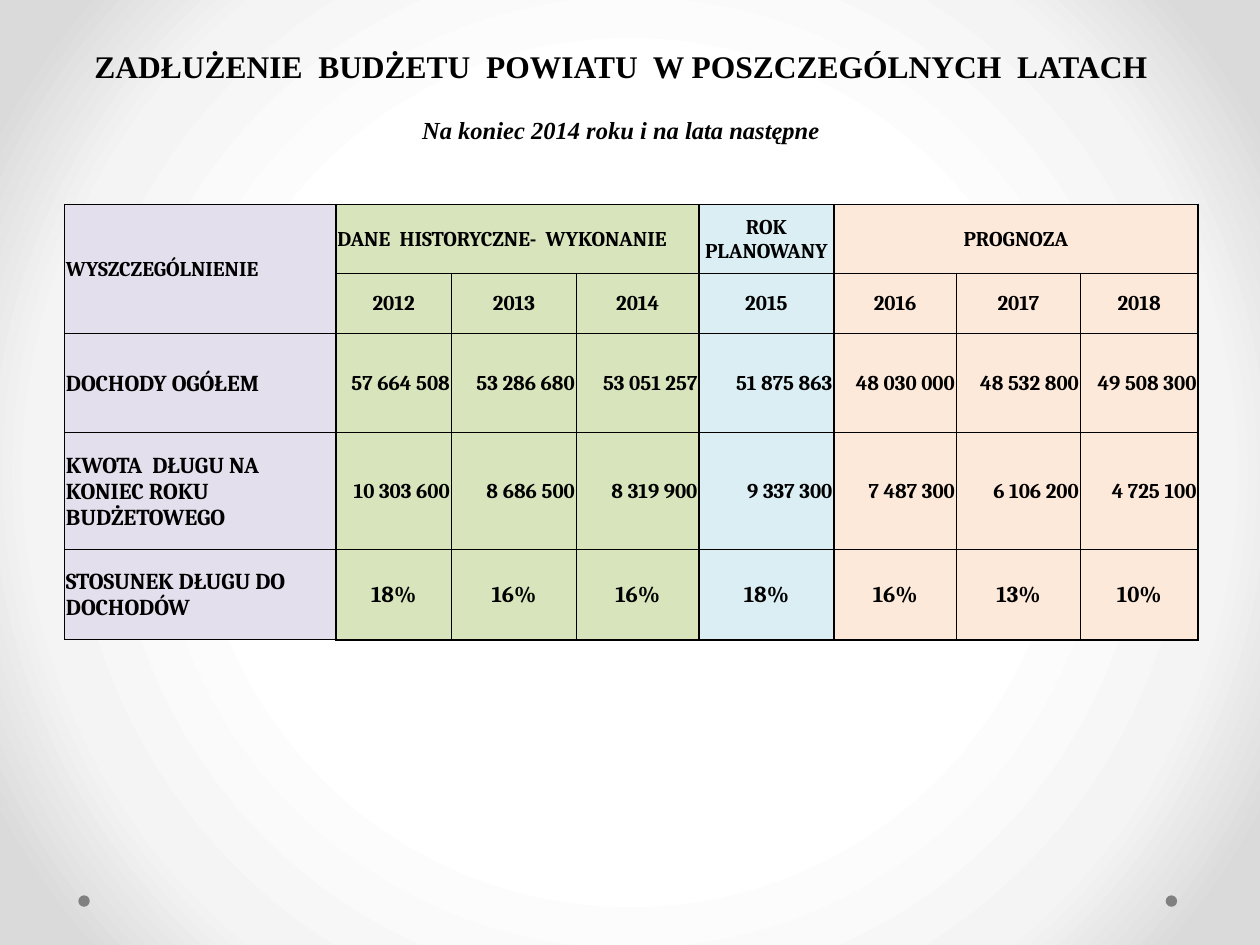
from dataclasses import dataclass

from pptx import Presentation
from pptx.dml.color import RGBColor
from pptx.enum.shapes import MSO_SHAPE
from pptx.enum.text import MSO_ANCHOR as Anchor, PP_ALIGN as Align
from pptx.oxml import parse_xml
from pptx.oxml.ns import nsdecls
from pptx.util import Cm, Pt


@dataclass(frozen=True)
class Theme:
    """Colours, fonts and sizes of the slide."""
    text: str = "000000"
    label: str = "E4DFEC"
    history: str = "D8E4BC"
    plan: str = "DAEEF3"
    forecast: str = "FDE9D9"
    dot: str = "808080"
    backdrop: tuple = ((50, "FFFFFF"), (76, "F4F4F4"), (92, "DADADA"))
    heading_font: str = "Times New Roman"
    table_font: str = "Cambria"
    title_size: int = 18
    subtitle_size: int = 14
    large_size: int = 13
    normal_size: int = 12
    thin: float = 0.5
    thick: float = 1


THEME = Theme()
COLUMN_WIDTHS = (5.47, 2.33, 2.52, 2.47, 2.72, 2.47, 2.5, 2.37)
ROW_HEIGHTS = (1.39, 1.21, 2, 2.36, 1.82)
COLUMN_FILLS = (THEME.label, *[THEME.history] * 3, THEME.plan, *[THEME.forecast] * 3)
GROUP_EDGES = {1, 4, 5, 8}
MERGES = (((0, 0), (1, 0)), ((0, 1), (0, 3)), ((0, 5), (0, 7)))
ROWS = (
    ("WYSZCZEGÓLNIENIE", "DANE  HISTORYCZNE-  WYKONANIE", "", "", "ROK PLANOWANY", "PROGNOZA", "", ""),
    ("", "2012", "2013", "2014", "2015", "2016", "2017", "2018"),
    ("DOCHODY OGÓŁEM", "57 664 508", "53 286 680", "53 051 257", "51 875 863",
     "48 030 000", "48 532 800", "49 508 300"),
    ("KWOTA  DŁUGU NA KONIEC ROKU BUDŻETOWEGO", "10 303 600", "8 686 500", "8 319 900",
     "9 337 300", "7 487 300", "6 106 200", "4 725 100"),
    ("STOSUNEK DŁUGU DO DOCHODÓW", "18%", "16%", "16%", "18%", "16%", "13%", "10%"),
)


def solid_fill(color):
    """Return the XML of a solid fill."""
    return f'<a:solidFill><a:srgbClr val="{color}"/></a:solidFill>'


def set_background(slide):
    """Give the slide a circular gradient that spreads from its centre."""
    stops = "".join(
        f'<a:gs pos="{position * 1000}"><a:srgbClr val="{color}"/></a:gs>'
        for position, color in THEME.backdrop)
    background = parse_xml(
        f'<p:bg {nsdecls("p", "a")}><p:bgPr><a:gradFill rotWithShape="1"><a:gsLst>{stops}</a:gsLst>'
        '<a:path path="circle"><a:fillToRect l="50000" t="50000" r="50000" b="50000"/></a:path>'
        '</a:gradFill><a:effectLst/></p:bgPr></p:bg>')
    slide.element.cSld.insert(0, background)


def add_dot(slide, left):
    """Add one small round ornament near the bottom edge."""
    shape = slide.shapes.add_shape(MSO_SHAPE.OVAL, Cm(left), Cm(18.05), Cm(0.23), Cm(0.23))
    shape.shadow.inherit = False
    shape.fill.solid()
    shape.fill.fore_color.rgb = RGBColor.from_string(THEME.dot)
    shape.line.fill.background()


def add_plain_table(slide, left, top, widths, heights):
    """Add an unbanded table with the given column widths and row heights."""
    table = slide.shapes.add_table(
        len(heights), len(widths), Cm(left), Cm(top), Cm(sum(widths)), Cm(sum(heights))).table
    table.first_row = table.horz_banding = False
    for column, width in zip(table.columns, widths):
        column.width = Cm(width)
    for row, height in zip(table.rows, heights):
        row.height = Cm(height)
    return table


def write_text(paragraph, text, font_name, size, align, italic=False):
    """Write one bold run into a paragraph."""
    paragraph.alignment = align
    run = paragraph.add_run()
    run.text = text
    font = run.font
    font.name, font.size = font_name, Pt(size)
    font.bold, font.italic = True, italic
    font.color.rgb = RGBColor.from_string(THEME.text)


def set_borders(cell, widths):
    """Draw the left, right, top and bottom borders, leaving out those of no width."""
    properties = cell._tc.get_or_add_tcPr()
    for index, (side, width) in enumerate(zip("LRTB", widths)):
        fill = solid_fill(THEME.text) if width else "<a:noFill/>"
        properties.insert(index, parse_xml(
            f'<a:ln{side} {nsdecls("a")} w="{Pt(width)}">{fill}</a:ln{side}>'))


def border_widths(cell, row, column):
    """Return thick widths round the column groups and thin ones elsewhere."""
    grouped = column > 0
    thick_sides = (
        column in GROUP_EDGES,
        column + cell.span_width in GROUP_EDGES,
        grouped and row == 0,
        grouped and row == len(ROWS) - 1,
    )
    return [THEME.thick if is_thick else THEME.thin for is_thick in thick_sides]


def cell_style(row, column, text):
    """Return the alignment and type size that suit a cell."""
    if column == 0:
        return Align.LEFT, THEME.large_size if row > 1 else THEME.normal_size
    if row == 0:
        return Align.LEFT if column == 1 else Align.CENTER, THEME.normal_size
    if text.endswith("%"):
        return Align.CENTER, THEME.large_size
    return Align.CENTER if row == 1 else Align.RIGHT, THEME.normal_size


def format_cell(cell, row, column, text):
    """Fill, outline and write one cell of the debt table."""
    cell.fill.solid()
    cell.fill.fore_color.rgb = RGBColor.from_string(COLUMN_FILLS[column])
    cell.vertical_anchor = Anchor.MIDDLE
    cell.margin_left = cell.margin_right = cell.margin_top = Cm(0.03)
    cell.margin_bottom = 0
    set_borders(cell, border_widths(cell, row, column))
    align, size = cell_style(row, column, text)
    write_text(cell.text_frame.paragraphs[0], text, THEME.table_font, size, align)


def add_heading(slide, title, subtitle):
    """Add the one-cell heading table with its title and subtitle."""
    cell = add_plain_table(slide, 1.09, 0.91, [22.86], [2.13]).cell(0, 0)
    cell.fill.background()
    cell.margin_top = cell.margin_bottom = 0
    set_borders(cell, [0] * 4)
    text_frame = cell.text_frame
    first, second = text_frame.paragraphs[0], text_frame.add_paragraph()
    write_text(first, title, THEME.heading_font, THEME.title_size, Align.CENTER)
    write_text(second, subtitle, THEME.heading_font, THEME.subtitle_size, Align.CENTER, italic=True)
    first.line_spacing = second.line_spacing = 1.15
    second.space_before = Pt(16)


def add_debt_table(slide):
    """Add the table of income and debt by year."""
    table = add_plain_table(slide, 1.3, 4.12, COLUMN_WIDTHS, ROW_HEIGHTS)
    for first, last in MERGES:
        table.cell(*first).merge(table.cell(*last))
    for row, texts in enumerate(ROWS):
        for column, text in enumerate(texts):
            cell = table.cell(row, column)
            if not cell.is_spanned:
                format_cell(cell, row, column, text)


def main():
    """Build the slide and save it."""
    presentation = Presentation()
    presentation.slide_width, presentation.slide_height = Cm(25.4), Cm(19.05)
    slide = presentation.slides.add_slide(presentation.slide_layouts[6])
    set_background(slide)
    for left in (23.5, 1.58):
        add_dot(slide, left)
    add_heading(slide, "ZADŁUŻENIE  BUDŻETU  POWIATU  W POSZCZEGÓLNYCH  LATACH",
                "Na koniec 2014 roku i na lata następne")
    add_debt_table(slide)
    presentation.save("out.pptx")


if __name__ == "__main__":
    main()
